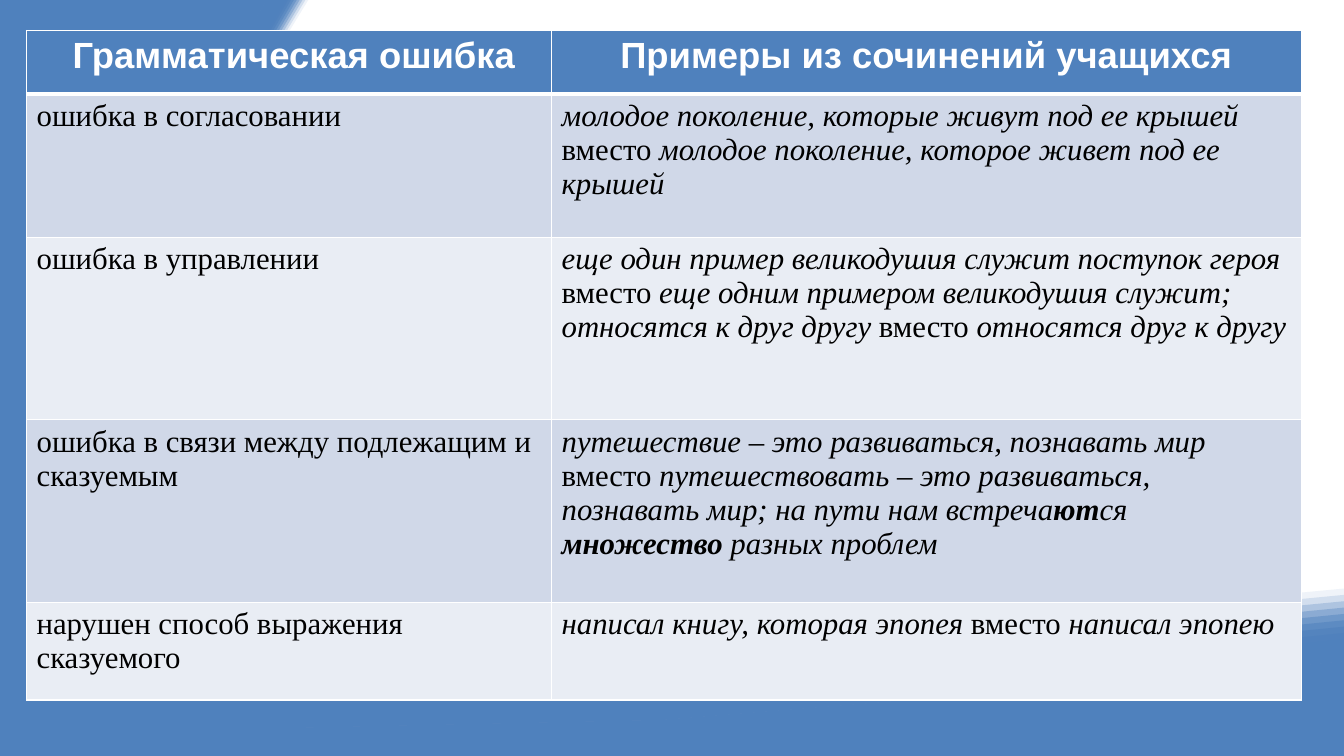
from lxml import etree
from pptx import Presentation
from pptx.dml.color import RGBColor
from pptx.enum.text import PP_ALIGN
from pptx.oxml import parse_xml
from pptx.oxml.ns import nsdecls, qn
from pptx.util import Cm, Pt

BLUE = RGBColor(0x4F, 0x81, 0xBD)
WHITE = RGBColor(0xFF, 0xFF, 0xFF)
BLACK = RGBColor(0x00, 0x00, 0x00)
ODD_ROW = RGBColor(0xD0, 0xD8, 0xE8)
EVEN_ROW = RGBColor(0xE9, 0xED, 0xF4)
WIDTH, HEIGHT = 33.87, 19.05
LAYERS = 11
CURVE_STEPS = 4

OUTER_EDGE = [(33.87, 16.66), (33.87, 16.66), (27.31, 17.32), (16.64, 18.14), (2.69, 19.18),
              (-4.11, 18.08), (4.98, 2.92), (6.1, 1.04), (6.73, 0), (6.73, 0)]
FAINTEST_EDGE = [(33.87, 14.83), (33.81, 14.83), (27.56, 15.47), (17.53, 16.21), (4.09, 17.22),
                 (-1.85, 16.05), (6.1, 2.77), (7.14, 1.02), (7.75, 0.03), (7.77, 0)]
SOLID_EDGE = [(33.87, 16.43), (32.99, 16.54), (26.62, 17.15), (16.87, 17.88), (3.1, 18.92),
              (-3.61, 17.86), (5.36, 2.9), (6.3, 1.32), (6.88, 0.28), (7.04, 0)]

PLAIN, ITALIC, BOLD_ITALIC = (False, False), (False, True), (True, True)
HEADINGS = [" Грамматическая ошибка", "Примеры из сочинений учащихся"]
ERRORS = [
    ("ошибка в согласовании", [
        ("молодое поколение, которые живут под ее крышей", ITALIC),
        (" вместо ", PLAIN),
        ("молодое поколение, которое живет под ее крышей", ITALIC)]),
    ("ошибка в управлении", [
        ("еще один пример великодушия служит поступок героя", ITALIC),
        (" вместо ", PLAIN),
        ("еще одним примером великодушия служит; относятся к друг другу ", ITALIC),
        ("вместо ", PLAIN),
        ("относятся друг к другу", ITALIC)]),
    ("ошибка в связи между подлежащим и сказуемым", [
        ("путешествие – это развиваться, познавать мир ", ITALIC),
        ("вместо ", PLAIN),
        ("путешествовать – это развиваться, познавать мир; на пути нам встреча", ITALIC),
        ("ют", BOLD_ITALIC),
        ("ся ", ITALIC),
        ("множество", BOLD_ITALIC),
        (" разных проблем", ITALIC)]),
    ("нарушен способ выражения сказуемого", [
        ("написал книгу, которая эпопея", ITALIC),
        (" вместо ", PLAIN),
        ("написал эпопею", ITALIC)]),
]

prs = Presentation()
prs.slide_width, prs.slide_height = Cm(WIDTH), Cm(HEIGHT)
slide = prs.slides.add_slide(prs.slide_layouts[6])


def trace(edge):
    points = [edge[0]]
    for first in range(0, len(edge) - 1, 3):
        controls = edge[first:first + 4]
        for step in range(1, CURVE_STEPS + 1):
            t = step / CURVE_STEPS
            weights = ((1 - t) ** 3, 3 * t * (1 - t) ** 2, 3 * t * t * (1 - t), t ** 3)
            points.append(tuple(sum(w * c[axis] for w, c in zip(weights, controls))
                                for axis in (0, 1)))
    return points


def add_wave(outline, opacity):
    corners = [(Cm(x), Cm(y)) for x, y in outline]
    builder = slide.shapes.build_freeform(*corners[0])
    builder.add_line_segments(corners[1:], close=True)
    wave = builder.convert_to_shape()
    wave.shadow.inherit = False
    wave.line.fill.background()
    wave.fill.solid()
    wave.fill.fore_color.rgb = BLUE
    if opacity < 100:
        colour = wave.element.spPr.find(qn("a:solidFill"))[0]
        etree.SubElement(colour, qn("a:alpha"), val=str(opacity * 1000))


outer = trace(OUTER_EDGE)
add_wave(outer + [(0, 0), (0, HEIGHT), (WIDTH, HEIGHT)], 100)
for layer in range(LAYERS):
    share = layer / (LAYERS - 1)
    inner_edge = [(x0 + (x1 - x0) * share, y0 + (y1 - y0) * share)
                  for (x0, y0), (x1, y1) in zip(FAINTEST_EDGE, SOLID_EDGE)]
    add_wave(trace(inner_edge) + outer[::-1], round(100 * (layer + 1) / LAYERS))

table = slide.shapes.add_table(len(ERRORS) + 1, 2, Cm(0.67), Cm(0.77), Cm(32.13), Cm(16.87)).table
for column, width in zip(table.columns, (13.23, 18.9)):
    column.width = Cm(width)
for row, height in zip(table.rows, (1.6, 3.61, 4.6, 4.6, 2.46)):
    row.height = Cm(height)

rows = [[[(heading, (True, False))] for heading in HEADINGS]]
rows += [[[(error, PLAIN)], examples] for error, examples in ERRORS]
for r, row in enumerate(rows):
    header = r == 0
    for c, runs in enumerate(row):
        cell = table.cell(r, c)
        properties = cell._tc.get_or_add_tcPr()
        for side in "LRTB":
            thick = (r, side) in ((0, "B"), (1, "T"))
            properties.append(parse_xml(
                f'<a:ln{side} {nsdecls("a")} w="{Pt(3 if thick else 1)}"><a:solidFill>'
                f'<a:srgbClr val="{WHITE}"/></a:solidFill></a:ln{side}>'))
        cell.fill.solid()
        cell.fill.fore_color.rgb = BLUE if header else (ODD_ROW if r % 2 else EVEN_ROW)
        paragraph = cell.text_frame.paragraphs[0]
        paragraph.alignment = PP_ALIGN.CENTER if header else PP_ALIGN.LEFT
        paragraph.font.name = "Arial" if header else "Times New Roman"
        paragraph.font.size = Pt(26 if header else 22)
        paragraph.font.color.rgb = WHITE if header else BLACK
        for text, (bold, italic) in runs:
            run = paragraph.add_run()
            run.text = text
            run.font.bold, run.font.italic = bold, italic

prs.save("out.pptx")
